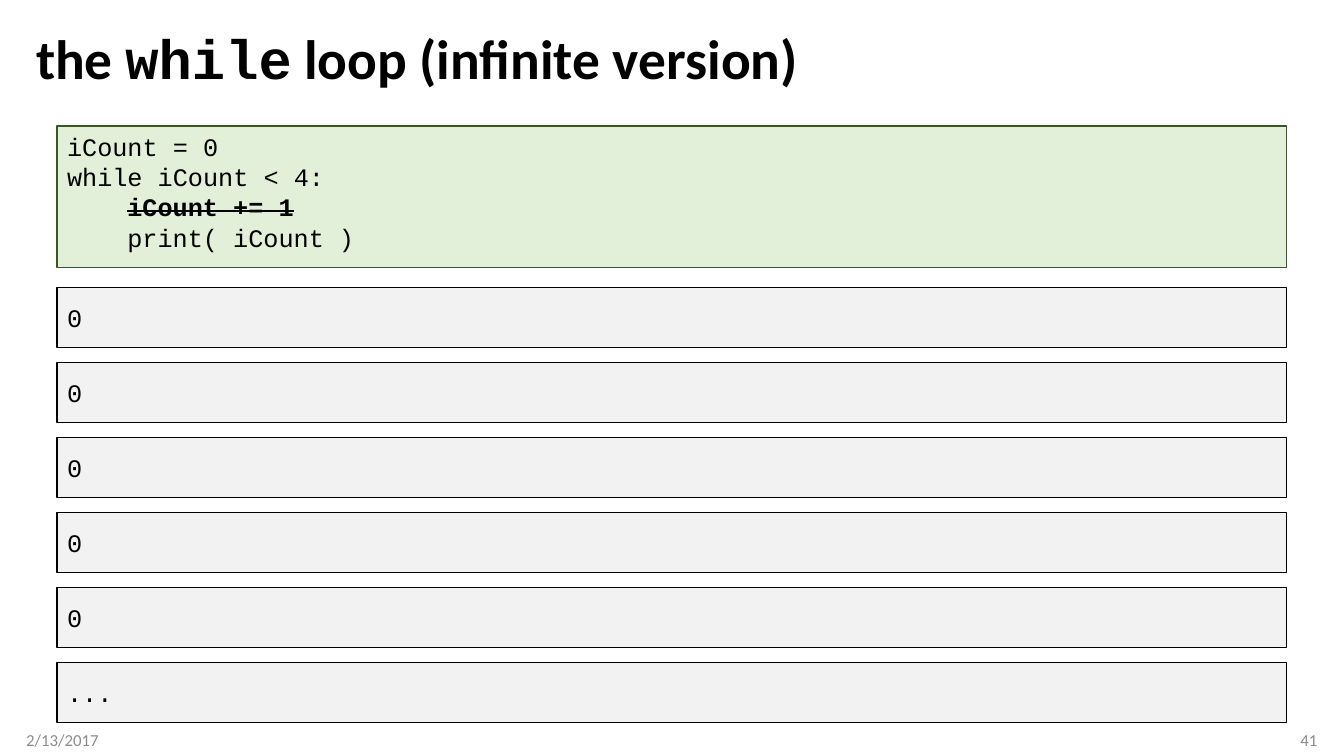
from pptx import Presentation
from pptx.dml.color import RGBColor
from pptx.enum.shapes import MSO_SHAPE as Shape
from pptx.enum.text import MSO_ANCHOR as Anchor, PP_ALIGN as Align
from pptx.util import Cm, Pt

COLORS = {
    "text": "000000",
    "footer": "8C8C8C",
    "code_fill": "E2F0D9",
    "code_line": "385723",
    "output_fill": "F2F2F2",
    "output_line": "000000",
}
SANS, MONO = "Calibri", "Courier New"
CODE_INDENT = Cm(1.52)  # four monospaced characters at 18 pt
OUTPUT_TOP, OUTPUT_PITCH = 7.24, 1.89  # the last box ends above the footer


def rgb(name):
    return RGBColor.from_string(COLORS[name])


class LoopSlide:
    """Holds the current slide and the style of its elements."""

    box_left, box_width = 1.44, 30.99
    code_size, footer_size, title_size = 18, 12, 39.6

    def __init__(self, presentation):
        self.slide = presentation.slides.add_slide(presentation.slide_layouts[6])

    def run(self, paragraph, text, font, size, color="text", bold=False, strike=False):
        run = paragraph.add_run()
        run.text = text
        run.font.name = font
        run.font.size = Pt(size)
        run.font.bold = bold
        run.font.color.rgb = rgb(color)
        if strike:
            run.font._element.set("strike", "sngStrike")

    def text_frame(self, left, top, width, height):
        box = self.slide.shapes.add_textbox(Cm(left), Cm(top), Cm(width), Cm(height))
        frame = box.text_frame
        frame.word_wrap = True
        frame.vertical_anchor = Anchor.MIDDLE
        return frame

    def title(self, parts):
        paragraph = self.text_frame(0.66, 0.64, 32.54, 1.83).paragraphs[0]
        paragraph.line_spacing = 0.9
        for text, font in parts:
            self.run(paragraph, text, font, self.title_size, bold=True)

    def footer(self, text, left, align):
        frame = self.text_frame(left, 18.23, 7.62, 0.82)
        if align == Align.LEFT:
            frame.margin_left = 0
        else:
            frame.margin_right = 0
        paragraph = frame.paragraphs[0]
        paragraph.alignment = align
        self.run(paragraph, text, SANS, self.footer_size, "footer")

    def box(self, top, height, style, anchor, lines):
        """Draw a framed box; each line is (text, indented, struck)."""
        shape = self.slide.shapes.add_shape(
            Shape.RECTANGLE, Cm(self.box_left), Cm(top), Cm(self.box_width), Cm(height))
        shape.shadow.inherit = False
        shape.fill.solid()
        shape.fill.fore_color.rgb = rgb(style + "_fill")
        shape.line.color.rgb = rgb(style + "_line")
        shape.line.width = Pt(1)
        frame = shape.text_frame
        frame.word_wrap = True
        frame.vertical_anchor = anchor
        for index, (text, indented, struck) in enumerate(lines):
            paragraph = frame.add_paragraph() if index else frame.paragraphs[0]
            paragraph.alignment = Align.LEFT
            if indented:
                paragraph._p.get_or_add_pPr().set("marL", str(int(CODE_INDENT)))
            self.run(paragraph, text, MONO, self.code_size, bold=struck, strike=struck)

    def code(self, lines):
        self.box(3.18, 3.56, "code", Anchor.TOP, lines)

    def output(self, top, text):
        self.box(top, 1.52, "output", Anchor.MIDDLE, [(text, False, False)])


def main():
    presentation = Presentation()
    presentation.slide_width, presentation.slide_height = Cm(33.87), Cm(19.05)
    slide = LoopSlide(presentation)

    slide.title([("the ", SANS), ("while", MONO), (" loop (infinite version)", SANS)])
    slide.footer("2/13/2017", 0.66, Align.LEFT)
    slide.footer("41", 25.58, Align.RIGHT)
    slide.code([
        ("iCount = 0", False, False),
        ("while iCount < 4:", False, False),
        ("iCount += 1", True, True),
        ("print( iCount )", True, False),
    ])

    for index, text in enumerate(["0"] * 5 + ["..."]):
        slide.output(OUTPUT_TOP + index * OUTPUT_PITCH, text)

    presentation.save("out.pptx")


if __name__ == "__main__":
    main()
